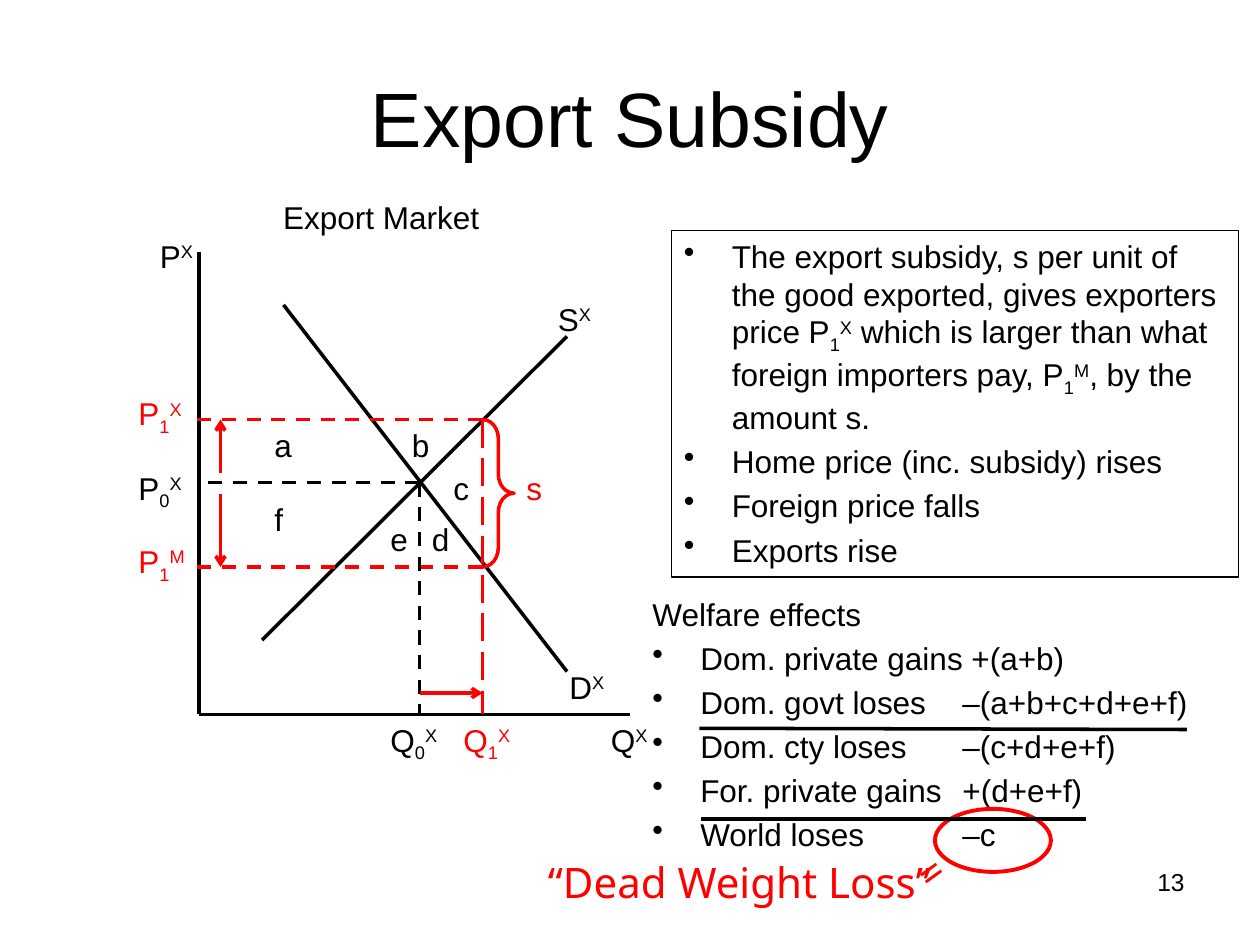
import pptx
import pptx.dml.color
import pptx.enum.dml
import pptx.enum.shapes
import pptx.enum.text
import pptx.oxml
import pptx.oxml.ns
import pptx.util

Inches = pptx.util.Inches
Pt = pptx.util.Pt
Shapes = pptx.enum.shapes.MSO_SHAPE
Align = pptx.enum.text.PP_ALIGN
Dash = pptx.enum.dml.MSO_LINE
BLACK = pptx.dml.color.RGBColor(0x00, 0x00, 0x00)
RED = pptx.dml.color.RGBColor(0xFF, 0x00, 0x00)
SUB, SUPER = -25000, 30000


class Diagram:
    """Draws the elements of an economics slide in one consistent style."""

    def __init__(self, slide):
        self.slide = slide
        self.font = "Arial"
        self.size = 18

    def add_run(self, paragraph, text, color, size, font, baseline=0):
        run = paragraph.add_run()
        run.text = text
        run.font.name = font
        run.font.size = Pt(size)
        run.font.color.rgb = color
        if baseline:
            run.font._element.set("baseline", str(baseline))

    def fill_text(self, shape, paragraphs, color=BLACK, size=None, font=None,
                  align=Align.LEFT, space=0, plain=0, bullets=False):
        frame = shape.text_frame
        frame.word_wrap = True
        for index, pieces in enumerate(paragraphs):
            paragraph = frame.paragraphs[0] if index == 0 else frame.add_paragraph()
            paragraph.alignment = align
            paragraph.space_before = Pt(space)
            if bullets and index >= plain:
                properties = paragraph._p.get_or_add_pPr()
                properties.set("marL", str(Inches(0.38)))
                properties.set("indent", str(-Inches(0.38)))
                bullet = pptx.oxml.parse_xml(
                    f'<a:buChar {pptx.oxml.ns.nsdecls("a")} char="•"/>')
                properties.append(bullet)
            for piece in [pieces] if isinstance(pieces, str) else pieces:
                text, baseline = (piece, 0) if isinstance(piece, str) else piece
                self.add_run(paragraph, text, color, size or self.size,
                             font or self.font, baseline)

    def text(self, left, top, width, height, paragraphs, **style):
        box = self.slide.shapes.add_textbox(
            Inches(left), Inches(top), Inches(width), Inches(height))
        self.fill_text(box, paragraphs, **style)
        return box

    def label(self, left, top, width, name, sub="", sup="", color=BLACK):
        pieces = [name] + [(text, level) for text, level
                           in ((sub, SUB), (sup, SUPER)) if text]
        self.text(left, top, width, 0.4, [pieces], color=color)

    def line(self, start, end, color=BLACK, dash=None, arrow=False):
        connector = self.slide.shapes.add_connector(
            pptx.enum.shapes.MSO_CONNECTOR.STRAIGHT,
            *(Inches(value) for value in (*start, *end)))
        connector.line.color.rgb = color
        connector.line.width = Pt(2)
        if dash:
            connector.line.dash_style = dash
        namespace = pptx.oxml.ns.nsdecls("a")
        if arrow:
            connector.line._get_or_add_ln().append(
                pptx.oxml.parse_xml(f'<a:tailEnd {namespace} type="arrow"/>'))
        connector._element.spPr.append(
            pptx.oxml.parse_xml(f"<a:effectLst {namespace}/>"))

    def outline(self, kind, left, top, width, height, color, weight):
        shape = self.slide.shapes.add_shape(
            kind, Inches(left), Inches(top), Inches(width), Inches(height))
        shape.shadow.inherit = False
        shape.fill.background()
        shape.line.color.rgb = color
        shape.line.width = Pt(weight)
        return shape


def draw_market(diagram):
    """Draw the axes, curves, price levels and labels of the export market."""
    left, bottom = 1.58, 5.67
    old_quantity, new_quantity = 3.33, 3.83
    export_price, old_price, import_price = 3.33, 3.83, 4.5

    diagram.line((left, bottom), (5, bottom))
    diagram.line((left, bottom), (left, 2))
    diagram.line((4.5, 2.67), (2.08, 5.08))
    diagram.line((4.5, 5.33), (2.25, 2.42))
    diagram.line((old_quantity, old_price), (left, old_price), dash=Dash.DASH)
    for price in (export_price, import_price):
        diagram.line((new_quantity, price), (1.5, price), RED, Dash.DASH)
    diagram.line((new_quantity, export_price), (new_quantity, bottom), RED, Dash.LONG_DASH)
    diagram.line((old_quantity, old_price), (old_quantity, bottom), dash=Dash.DASH)

    brace = diagram.outline(Shapes.RIGHT_BRACE, new_quantity, export_price,
                            0.25, import_price - export_price, RED, 2)
    brace.adjustments[0] = 0.604
    brace.adjustments[1] = 0.5

    for start, end in (((old_quantity, 5.5), (new_quantity, 5.5)),
                       ((1.75, 3.75), (1.75, export_price)),
                       ((1.75, 3.92), (1.75, import_price))):
        diagram.line(start, end, RED, arrow=True)

    for label in ((1.17, 1.83, 0.75, "P", "", "X"), (4.75, bottom, 0.75, "Q", "", "X"),
                  (4.42, 5.25, 0.6, "D", "", "X"), (4.33, 2.33, 0.6, "S", "", "X"),
                  (1, 3.67, 0.67, "P", "0", "X"), (3, bottom, 0.67, "Q", "0", "X"),
                  (3.58, bottom, 0.67, "Q", "1", "X", RED),
                  (1, 3.08, 0.67, "P", "1", "X", RED),
                  (1, 4.25, 0.67, "P", "1", "M", RED),
                  (4.08, 3.67, 0.67, "s", "", "", RED)):
        diagram.label(*label)
    for name, x, y in (("a", 2.08, 3.33), ("f", 2.08, 3.92), ("b", 3.17, 3.33),
                       ("c", 3.5, 3.67), ("d", 3.33, 4.08), ("e", 3, 4.08)):
        diagram.label(x, y, 0.33, name)
    diagram.text(1.63, 1.52, 2.79, 0.4, ["Export Market"], align=Align.CENTER)


def draw_explanation(diagram):
    """Draw the framed explanation and the list of welfare effects."""
    frame = diagram.outline(Shapes.RECTANGLE, 5.33, 1.83, 4.5, 2.75, BLACK, 0.75)
    frame.text_frame.vertical_anchor = pptx.enum.text.MSO_ANCHOR.TOP
    diagram.fill_text(frame, [
        ["The export subsidy, s per unit of the good exported, gives exporters price P",
         ("1", SUB), ("X", SUPER),
         " which is larger than what foreign importers pay, P",
         ("1", SUB), ("M", SUPER), ", by the amount s."],
        "Home price (inc. subsidy) rises", "Foreign price falls", "Exports rise",
    ], space=3.6, bullets=True)

    diagram.text(5.08, 4.67, 4.5, 2.25, [
        "Welfare effects", "Dom. private gains +(a+b)", "Dom. govt loses",
        "Dom. cty loses", "For. private gains", "World loses",
    ], space=3.6, plain=1, bullets=True)
    diagram.text(7.54, 5.37, 2.1, 1.5, ["–(a+b+c+d+e+f)", "–(c+d+e+f)", "+(d+e+f)", "–c"],
                 space=3.6)

    diagram.outline(Shapes.OVAL, 7.42, 6.42, 0.92, 0.5, RED, 2.25)
    loss_style = {"color": RED, "size": 24, "font": "Noto Sans"}
    diagram.text(4.25, 6.75, 3.55, 0.5, ["“Dead Weight Loss”"], **loss_style)
    equals = diagram.text(7.19, 6.66, 0.42, 0.5, ["="], **loss_style)
    equals.rotation = 324.2
    diagram.line((5.55, 5.78), (9.42, 5.79))
    diagram.line((5.56, 6.5), (8.62, 6.5))


def main():
    """Build the slide and save it."""
    presentation = pptx.Presentation()
    presentation.slide_width = Inches(10)
    presentation.slide_height = Inches(7.5)
    diagram = Diagram(presentation.slides.add_slide(presentation.slide_layouts[6]))
    title = diagram.text(0.5, 0.3, 9, 1.25, ["Export Subsidy"], size=44, align=Align.CENTER)
    title.text_frame.vertical_anchor = pptx.enum.text.MSO_ANCHOR.MIDDLE
    diagram.text(7.17, 6.83, 2.33, 0.52, ["13"], size=14, align=Align.RIGHT)
    draw_market(diagram)
    draw_explanation(diagram)
    presentation.save("out.pptx")


if __name__ == "__main__":
    main()
